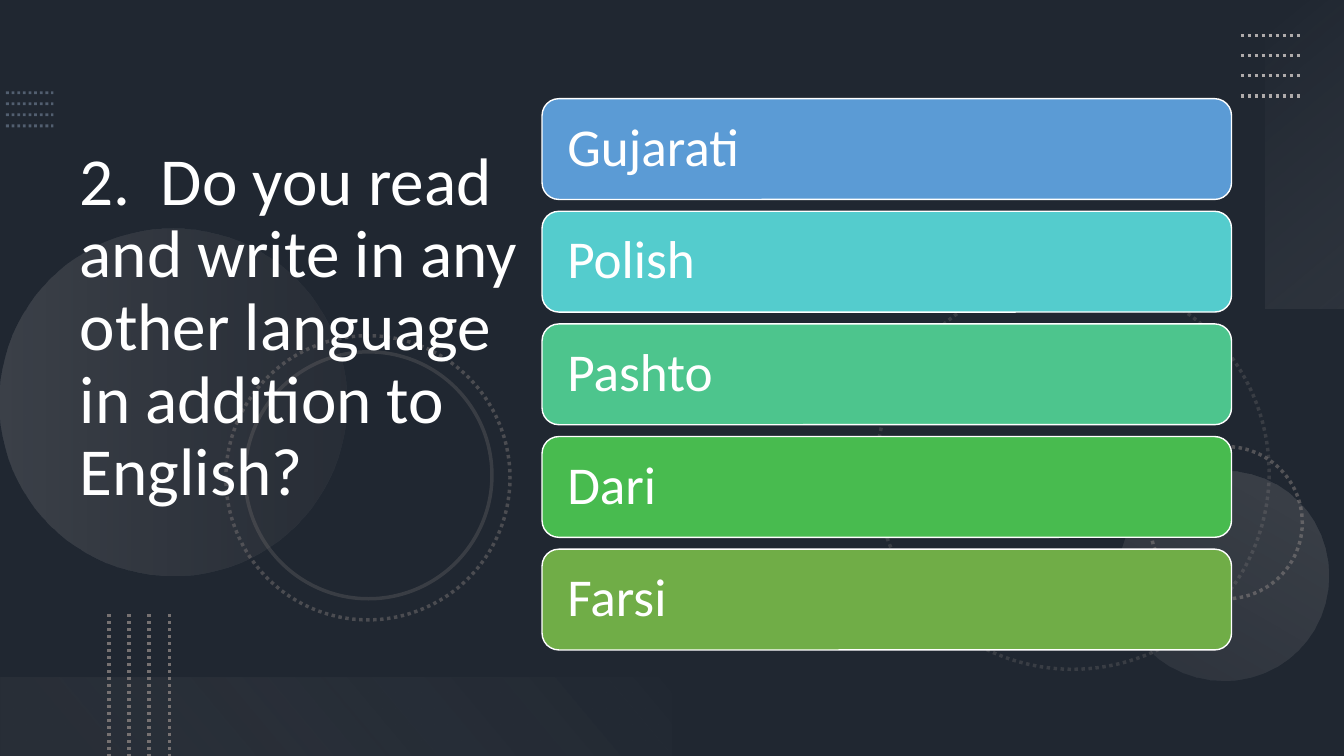
from lxml.etree import SubElement
from pptx import Presentation
from pptx.dml.color import RGBColor
from pptx.enum.dml import MSO_LINE
from pptx.enum.shapes import MSO_CONNECTOR, MSO_SHAPE
from pptx.enum.text import MSO_ANCHOR, MSO_AUTO_SIZE, PP_ALIGN
from pptx.oxml.ns import qn
from pptx.util import Pt

QUESTION = "2.  Do you read and write in any other language in addition to English?"
LANGUAGES = [
    ("Gujarati", "5B9BD5"),
    ("Polish", "54CCCD"),
    ("Pashto", "4DC58D"),
    ("Dari", "48BB4F"),
    ("Farsi", "70AD47"),
]
FONT, WHITE = "Calibri", "FFFFFF"
WIDTH, HEIGHT = 960, 540

# first line (x1, y1, x2, y2), step (dx, dy), colour, weight, opacity
LEFT_DOTS = ((4.3, 66.2, 38.2, 66.2), (0, 7.9), "8497B0", 2, 50)
RIGHT_DOTS = ((886.3, 25.2, 929.5, 25.2), (0, 14.4), "AFABAB", 2.5, 100)
BOTTOM_DOTS = ((77.8, 438.5, 77.8, HEIGHT), (14.4, 0), "767171", 2.5, 100)
LINES_PER_STACK = 4

# left, top, diameter, rotation, dotted, opacity
BACK_RINGS = [(625.7, 197.3, 280.8, 75, True, 30), (821.5, 319, 108.7, 270, True, 60)]
FRONT_RINGS = [(161.3, 239.8, 203, 75, True, 50), (175, 251.3, 176.4, 75, False, 30)]

# box, rotation, angle, stops of (position, colour, opacity)
DISCS = [
    ((0, 163.4, 247.7, 247.7), 270, 90, [(0, "AFABAB", 20), (1, "767171", 10)]),
    ((799.2, 336.2, 149.8, 149.8), 210, 90, [(0, "AFABAB", 10), (1, "AFABAB", 20)]),
]
RIGHT_BAND = ((822.2, 82.1, 220.3, 56.2), 270, 140, [(0, "F5F5F5", 0), (1, "AFABAB", 10)])
BOTTOM_BAND = ((0, 483.8, 480, 56.2), 180, 140, [(0.1, "767171", 10), (1, "F1F0F0", 0)])

CARD_LEFT, CARD_TOP, CARD_WIDTH, CARD_HEIGHT, CARD_PITCH = 387.2, 70.5, 492.5, 72, 80.45


def rgb(value):
    return RGBColor.from_string(value)


def fade(colour, opacity):
    if opacity < 100:
        SubElement(colour, qn("a:alpha")).set("val", str(opacity * 1000))


def add_shape(kind, box, rotation=0):
    shape = slide.shapes.add_shape(kind, *map(Pt, box))
    shape.rotation = rotation
    shape.shadow.inherit = False
    return shape


def style_line(line, colour, weight, opacity, dotted):
    line.color.rgb = rgb(colour)
    line.width = Pt(weight)
    if dotted:
        line.dash_style = MSO_LINE.ROUND_DOT


def add_dots(first, step, colour, weight, opacity):
    x1, y1, x2, y2 = first
    dx, dy = step
    for i in range(LINES_PER_STACK):
        ends = (x1 + i * dx, y1 + i * dy, x2 + i * dx, y2 + i * dy)
        dots = slide.shapes.add_connector(MSO_CONNECTOR.STRAIGHT, *map(Pt, ends))
        style_line(dots.line, colour, weight, opacity, True)
        properties = dots.element.spPr
        fade(properties.xpath("a:ln//a:srgbClr")[0], opacity)
        SubElement(properties, qn("a:effectLst"))


def add_rings(rings):
    for left, top, diameter, rotation, dotted, opacity in rings:
        ring = add_shape(MSO_SHAPE.OVAL, (left, top, diameter, diameter), rotation)
        ring.fill.background()
        style_line(ring.line, "767171", 2.5, opacity, dotted)
        fade(ring.element.spPr.xpath("a:ln//a:srgbClr")[0], opacity)


def add_glow(kind, box, rotation, angle, stops):
    """Add a borderless shape with a translucent gradient."""
    glow = add_shape(kind, box, rotation)
    glow.line.fill.background()
    glow.fill.gradient()
    glow.fill.gradient_angle = 360 - angle
    for stop, (position, colour, _) in zip(glow.fill.gradient_stops, stops):
        stop.position = position
        stop.color.rgb = rgb(colour)
    for colour, (_, _, opacity) in zip(glow.element.spPr.xpath("a:gradFill//a:srgbClr"), stops):
        fade(colour, opacity)


def write(frame, text, size):
    frame.word_wrap = True
    frame.auto_size = MSO_AUTO_SIZE.NONE
    frame.vertical_anchor = MSO_ANCHOR.MIDDLE
    paragraph = frame.paragraphs[0]
    paragraph.alignment = PP_ALIGN.LEFT
    paragraph.line_spacing = 0.9
    run = paragraph.add_run()
    run.text = text
    run.font.size = Pt(size)
    run.font.name = FONT
    run.font.color.rgb = rgb(WHITE)


deck = Presentation()
deck.slide_width, deck.slide_height = Pt(WIDTH), Pt(HEIGHT)
slide = deck.slides.add_slide(deck.slide_layouts[5])
slide.background.fill.solid()
slide.background.fill.fore_color.rgb = rgb("44546A")

veil = add_shape(MSO_SHAPE.RECTANGLE, (0, 0, WIDTH, HEIGHT))
veil.fill.solid()
veil.fill.fore_color.rgb = rgb("000000")
veil.line.fill.background()
fade(veil.element.spPr.xpath("a:solidFill/a:srgbClr")[0], 53)

add_dots(*LEFT_DOTS)
add_rings(BACK_RINGS)
for disc in DISCS:
    add_glow(MSO_SHAPE.OVAL, *disc)
add_rings(FRONT_RINGS)
add_glow(MSO_SHAPE.RECTANGLE, *RIGHT_BAND)
add_dots(*RIGHT_DOTS)
add_glow(MSO_SHAPE.RECTANGLE, *BOTTOM_BAND)
add_dots(*BOTTOM_DOTS)

question = slide.shapes.title
question.left, question.top, question.width, question.height = map(Pt, (49.7, 38.9, 330.5, 444.2))
slide.shapes.element.append(question.element)  # bring in front of the decoration
write(question.text_frame, QUESTION, 48)
question.text_frame.margin_bottom = Pt(56)

for row, (language, colour) in enumerate(LANGUAGES):
    top = CARD_TOP + row * CARD_PITCH
    card = add_shape(MSO_SHAPE.ROUNDED_RECTANGLE, (CARD_LEFT, top, CARD_WIDTH, CARD_HEIGHT))
    card.fill.solid()
    card.fill.fore_color.rgb = rgb(colour)
    style_line(card.line, WHITE, 1, 100, False)
    card.text_frame.margin_left = Pt(14.5)
    write(card.text_frame, language, 38)

deck.save("out.pptx")
